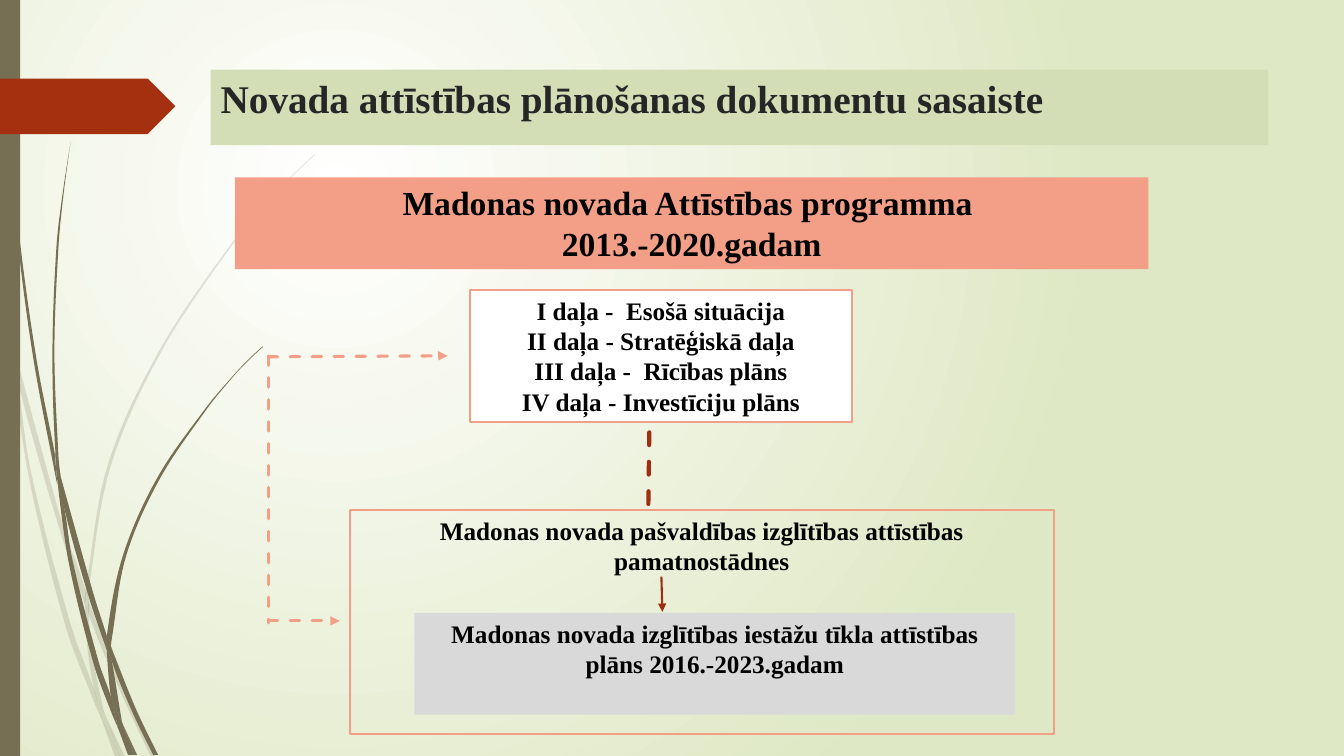
from dataclasses import dataclass
from math import dist

from lxml.etree import SubElement
from pptx import Presentation
from pptx.dml.color import RGBColor
from pptx.enum.dml import MSO_LINE_DASH_STYLE as Dash
from pptx.enum.shapes import MSO_CONNECTOR as Connector, MSO_SHAPE as Shape
from pptx.enum.text import MSO_ANCHOR as Anchor, PP_ALIGN as Align
from pptx.oxml.ns import qn
from pptx.util import Inches, Pt

WHITE = RGBColor(0xFF, 0xFF, 0xFF)
BLACK = RGBColor(0x00, 0x00, 0x00)
CHARCOAL = RGBColor(0x26, 0x26, 0x26)
GRAY = RGBColor(0xD9, 0xD9, 0xD9)
PALE_GREEN = RGBColor(0xDF, 0xE8, 0xC4)
TITLE_GREEN = RGBColor(0xD4, 0xDE, 0xB6)
OLIVE = RGBColor(0x76, 0x6F, 0x54)
SALMON = RGBColor(0xF3, 0x9E, 0x87)
RUST = RGBColor(0xA5, 0x30, 0x10)
DARK_RUST = RGBColor(0x9E, 0x2E, 0x0F)

Point = tuple[float, float]


@dataclass
class Box:
    left: float
    top: float
    width: float
    height: float
    fill: RGBColor | None = None
    lines: tuple[str, ...] = ()
    size: float = 18
    color: RGBColor = BLACK
    align: Align = Align.CENTER
    outline: float = 0
    kind: Shape = Shape.RECTANGLE


@dataclass
class Link:
    start: Point
    end: Point
    color: RGBColor
    width: float
    dashed: bool = True
    arrow: bool = True


# Grass blades: outline points of each piece
PALE_GRASS: list[list[Point]] = [
    [(0.11, 3.5), (0.09, 3.22), (0, 2.82), (0, 2.99), (0.1, 3.44)],
    [(0.58, 5.22), (0.84, 5.99), (0.85, 5.86), (0.62, 5.2), (0.14, 3.45), (0.17, 3.76)],
    [(0.92, 6.07), (0.88, 5.96), (0.88, 6.1), (1.23, 6.94), (1.5, 7.51), (1.55, 7.51),
     (1.27, 6.92)],
    [(1.19, 7.51), (1.24, 7.51), (1.05, 7.11)],
    [(0.93, 6.83), (0.7, 6.19), (0.31, 4.69), (0.17, 3.76), (0.11, 3.5), (0.28, 4.7),
     (0.65, 6.21), (0.92, 6.93), (1.01, 7.14), (0.99, 7.07)],
    [(0.84, 5.99), (0.87, 6.46), (0.93, 6.83), (0.96, 6.92), (1.05, 7.11), (1.03, 7.06),
     (0.91, 6.46), (0.88, 6.1), (0.88, 6.08)],
    [(0.88, 5.84), (1.1, 4.62), (1.6, 3.49), (2.29, 2.45), (2.68, 1.98), (2.9, 1.75),
     (3.12, 1.54), (3.12, 1.53), (2.89, 1.75), (2.68, 1.97), (2.28, 2.44), (1.58, 3.48),
     (1.07, 4.61), (0.85, 5.84), (0.85, 5.86), (0.88, 5.96)],
    [(1.01, 7.14), (1.14, 7.51), (1.19, 7.51)],
    [(0.88, 6.08), (0.88, 6.1), (0.88, 5.96), (0.85, 5.86), (0.84, 5.99)],
    [(0.96, 6.92), (0.93, 6.83), (0.99, 7.07), (1.01, 7.14), (1.19, 7.51), (1.05, 7.11)],
]
DARK_GRASS: list[list[Point]] = [
    [(0.07, 1.1), (0.17, 2.33), (0.33, 3.55), (0.56, 4.77), (0.57, 4.81), (0.55, 4.57),
     (0.55, 4.53), (0.36, 3.55), (0.19, 2.32), (0.08, 1.09), (0.05, 0.48), (0.04, 0),
     (0.03, 0), (0.04, 0.48)],
    [(0.88, 5.92), (1.06, 6.45), (1.06, 6.33), (1.06, 6.31), (0.93, 5.9), (0.6, 4.72),
     (0.64, 5.05)],
    [(1.13, 6.49), (1.1, 6.41), (1.11, 6.56), (1.32, 7.08), (1.52, 7.49), (1.57, 7.49),
     (1.36, 7.06)],
    [(1.1, 6.91), (0.98, 6.57), (0.72, 5.56), (0.64, 5.05), (0.57, 4.77), (0.68, 5.57),
     (0.93, 6.59), (1.11, 7.08), (1.17, 7.22), (1.16, 7.17)],
    [(0.6, 4.72), (0.58, 4.53), (0.54, 3.49), (0.58, 2.45), (0.63, 1.93), (0.7, 1.41),
     (0.62, 1.93), (0.56, 2.45), (0.52, 3.49), (0.55, 4.49)],
    [(1.33, 7.49), (1.36, 7.49), (1.22, 7.19)],
    [(0.57, 4.77), (0.64, 5.05), (0.6, 4.72), (0.55, 4.49), (0.55, 4.53)],
    [(1.11, 6.33), (1.25, 5.52), (1.58, 4.76), (2.05, 4.06), (2.31, 3.74), (2.45, 3.59),
     (2.61, 3.44), (2.6, 3.44), (2.45, 3.58), (2.31, 3.73), (2.04, 4.05), (1.56, 4.74),
     (1.22, 5.51), (1.06, 6.31), (1.1, 6.41)],
    [(1.17, 7.22), (1.27, 7.49), (1.31, 7.49)],
    [(1.06, 6.45), (1.1, 6.91), (1.16, 7.06), (1.22, 7.19), (1.21, 7.16), (1.11, 6.56),
     (1.09, 6.51)],
    [(1.06, 6.45), (1.09, 6.51), (1.11, 6.56), (1.1, 6.41), (1.06, 6.31), (1.06, 6.33)],
    [(1.16, 7.06), (1.1, 6.91), (1.16, 7.17), (1.17, 7.22), (1.3, 7.49), (1.33, 7.49),
     (1.22, 7.19)],
]

BOXES = [
    Box(0, 0, 0.2, 7.5, OLIVE),
    Box(0, 0.78, 1.74, 0.55, RUST, kind=Shape.PENTAGON),
    Box(2.09, 0.69, 10.49, 0.75, TITLE_GREEN,
        ("Novada attīstības plānošanas dokumentu sasaiste",), 28, CHARCOAL, Align.LEFT),
    Box(2.33, 1.76, 9.06, 0.91, SALMON,
        ("Madonas novada Attīstības programma ", "2013.-2020.gadam"), 24),
    Box(4.66, 2.88, 3.79, 1.31, WHITE,
        ("I daļa -  Esošā situācija", "II daļa - Stratēģiskā daļa",
         "III daļa -  Rīcības plāns", "IV daļa - Investīciju plāns"), outline=1.25),
    Box(3.47, 5.06, 6.98, 2.22, None,
        ("Madonas novada pašvaldības izglītības attīstības pamatnostādnes",), outline=1.5),
    Box(4.11, 6.08, 5.96, 1.01, GRAY,
        ("Madonas novada izglītības iestāžu tīkla attīstības plāns 2016.-2023.gadam",)),
]
LINKS = [
    Link((6.44, 4.29), (6.43, 5.04), DARK_RUST, 3, arrow=False),
    Link((2.66, 3.53), (2.66, 6.18), SALMON, 2.25, arrow=False),
    Link((2.66, 3.54), (4.44, 3.53), SALMON, 2.25),
    Link((2.66, 6.16), (3.37, 6.16), SALMON, 2.25),
    Link((6.56, 5.72), (6.57, 6.07), DARK_RUST, 1.5, dashed=False),
]


def set_background(slide) -> None:
    fill = slide.background.fill
    fill.gradient()
    for stop, color in zip(fill.gradient_stops, (WHITE, PALE_GREEN)):
        stop.color.rgb = color
    gradient = slide.element.find(".//" + qn("a:gradFill"))
    gradient.remove(gradient.find(qn("a:lin")))
    circle = SubElement(gradient, qn("a:path"), path="circle")
    SubElement(circle, qn("a:fillToRect"), l="50000", t="50000", r="100000", b="100000")


def handle(before: Point, here: Point, after: Point, length: float) -> Point:
    """Curve handle at a point; a sharp corner gets none."""
    (ax, ay), (bx, by), (cx, cy) = before, here, after
    dot = (bx - ax) * (cx - bx) + (by - ay) * (cy - by)
    if dot < 0.8 * dist(before, here) * dist(here, after):
        return here
    scale = length / 3 / dist(before, after)
    return bx + (cx - ax) * scale, by + (cy - ay) * scale


def draw_grass(slide, points: list[Point], opacity: int) -> None:
    start, *rest = [(Inches(x), Inches(y)) for x, y in points]
    builder = slide.shapes.build_freeform(*start)
    builder.add_line_segments([*rest, start])
    shape = builder.convert_to_shape()
    shape.shadow.inherit = False
    shape.fill.solid()
    shape.fill.fore_color.rgb = OLIVE
    shape.line.fill.background()
    color = shape.element.spPr.find(".//" + qn("a:srgbClr"))
    SubElement(color, qn("a:alpha"), val=str(opacity * 1000))
    # Bend the straight sides
    sides = list(shape.element.iter(qn("a:lnTo")))
    local = [(int(side[0].get("x")), int(side[0].get("y"))) for side in sides]
    for i, side in enumerate(sides):
        a, b, c, d = (local[(i + k) % len(local)] for k in (-2, -1, 0, 1))
        length = dist(b, c)
        side.tag = qn("a:cubicBezTo")
        side.remove(side[0])
        for x, y in (handle(a, b, c, length), handle(d, c, b, length), c):
            SubElement(side, qn("a:pt"), x=str(round(x)), y=str(round(y)))


def draw_box(slide, box: Box) -> None:
    frame = [Inches(v) for v in (box.left, box.top, box.width, box.height)]
    shape = slide.shapes.add_shape(box.kind, *frame)
    shape.shadow.inherit = False
    shape.fill.background()
    if box.fill is not None:
        shape.fill.solid()
        shape.fill.fore_color.rgb = box.fill
    shape.line.fill.background()
    if box.outline:
        shape.line.color.rgb = SALMON
        shape.line.width = Pt(box.outline)
    text_frame = shape.text_frame
    text_frame.word_wrap = True
    text_frame.vertical_anchor = Anchor.TOP
    font_format = {"name": "Times New Roman", "size": Pt(box.size), "bold": True}
    for index, line in enumerate(box.lines):
        paragraph = text_frame.add_paragraph() if index else text_frame.paragraphs[0]
        paragraph.alignment = box.align
        run = paragraph.add_run()
        run.text = line
        for name, value in font_format.items():
            setattr(run.font, name, value)
        run.font.color.rgb = box.color


def draw_link(slide, link: Link) -> None:
    ends = [Inches(v) for v in (*link.start, *link.end)]
    connector = slide.shapes.add_connector(Connector.STRAIGHT, *ends)
    connector.line.color.rgb = link.color
    connector.line.width = Pt(link.width)
    outline = connector.element.spPr.find(qn("a:ln"))
    if link.dashed:
        connector.line.dash_style = Dash.DASH
        outline.set("cap", "rnd")
    if link.arrow:
        SubElement(outline, qn("a:tailEnd"), type="triangle")
    SubElement(connector.element.spPr, qn("a:effectLst"))


def main() -> None:
    presentation = Presentation()
    presentation.slide_width, presentation.slide_height = Inches(13.33), Inches(7.5)
    slide = presentation.slides.add_slide(presentation.slide_layouts[6])
    set_background(slide)
    for blades, opacity in ((PALE_GRASS, 20), (DARK_GRASS, 100)):
        for points in blades:
            draw_grass(slide, points, opacity)
    for box in BOXES:
        draw_box(slide, box)
    for link in LINKS:
        draw_link(slide, link)
    presentation.save("out.pptx")


if __name__ == "__main__":
    main()
